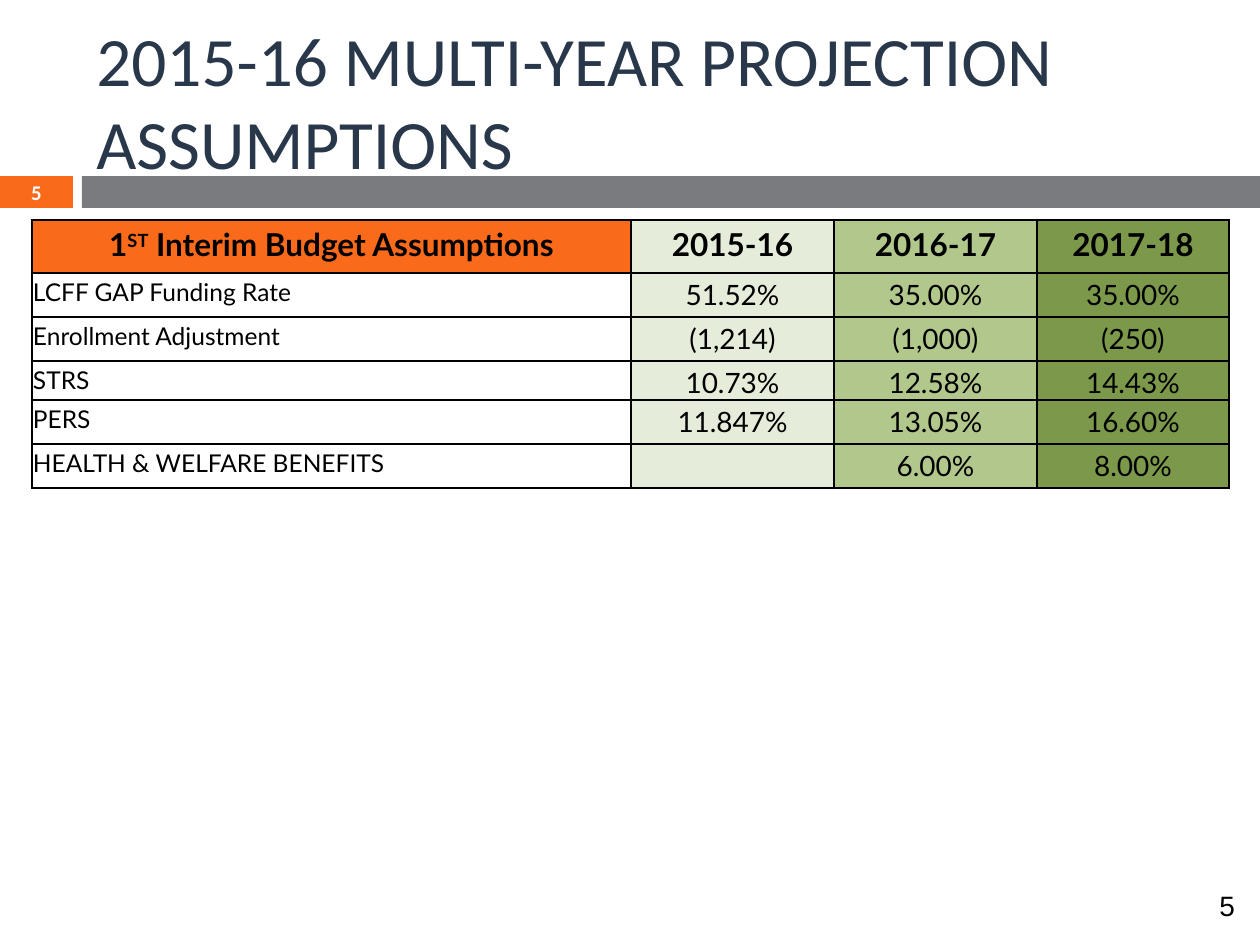
from dataclasses import dataclass

from lxml.etree import SubElement
from pptx import Presentation
from pptx.dml.color import RGBColor
from pptx.enum.shapes import MSO_SHAPE
from pptx.enum.text import MSO_ANCHOR, PP_ALIGN
from pptx.oxml.ns import qn
from pptx.util import Emu, Pt

PX = 914400 / 126
SLIDE_SIZE = (1260, 945)


@dataclass(frozen=True)
class Theme:
    title_font: str = "Calibri"
    table_font: str = "Lato"
    page_font: str = "Arial"
    navy: str = "28374A"
    orange: str = "F96A1B"
    gray: str = "797B7E"
    black: str = "000000"
    white: str = "FFFFFF"
    years: tuple = ("E5ECD9", "B2C78C", "7C984A")
    title_size: float = 39.6
    badge_size: float = 11.9
    header_size: int = 18
    label_size: int = 14
    value_size: int = 16
    page_size: int = 16
    border: int = 1
    line_spacing: float = 1.15


THEME = Theme()

COLUMN_WIDTHS = (599, 203, 203, 192)
ROW_HEIGHTS = (53, 44, 44, 39, 44, 44)
HEADER = ((("1", 0), ("ST", 30), (" Interim Budget Assumptions", 0)),
          "2015-16", "2016-17", "2017-18")
ASSUMPTIONS = (
    ("LCFF GAP Funding Rate", "51.52%", "35.00%", "35.00%"),
    ("Enrollment Adjustment", "(1,214)", "(1,000)", "(250)"),
    ("STRS", "10.73%", "12.58%", "14.43%"),
    ("PERS", "11.847%", "13.05%", "16.60%"),
    ("HEALTH & WELFARE BENEFITS", "", "6.00%", "8.00%"),
)


def px(length):
    return Emu(round(length * PX))


def set_fill(target, color):
    target.fill.solid()
    target.fill.fore_color.rgb = RGBColor.from_string(color)


def write(frame, text, *, font, size, color, bold=False,
          align=PP_ALIGN.LEFT, spacing=None):
    """Write a string, or (string, superscript percent) pairs, as one paragraph."""
    paragraph = frame.paragraphs[0]
    paragraph.alignment = align
    if spacing:
        paragraph.line_spacing = spacing
    parts = ((text, 0),) if isinstance(text, str) else text
    for words, raised in parts:
        run = paragraph.add_run()
        run.text = words
        run.font.name = font
        run.font.size = Pt(size)
        run.font.bold = bold
        run.font.color.rgb = RGBColor.from_string(color)
        if raised:
            run.font._element.set("baseline", str(raised * 1000))


def add_text(slide, box, text, anchor=MSO_ANCHOR.TOP, **text_format):
    text_box = slide.shapes.add_textbox(*map(px, box))
    frame = text_box.text_frame
    frame.word_wrap = True
    frame.vertical_anchor = anchor
    write(frame, text, **text_format)


def add_bar(slide, box, color):
    bar = slide.shapes.add_shape(MSO_SHAPE.RECTANGLE, *map(px, box))
    bar.shadow.inherit = False
    set_fill(bar, color)
    bar.line.fill.background()


def add_title(slide, box):
    add_text(slide, box, "2015-16 MULTI-YEAR PROJECTION ASSUMPTIONS",
             anchor=MSO_ANCHOR.MIDDLE, font=THEME.title_font,
             size=THEME.title_size, color=THEME.navy)


def add_number_band(slide, box, number):
    left, top, width, height = box
    badge_width, gap = 73, 9
    bar_left = badge_width + gap
    badge = (left, top, badge_width, height)
    add_bar(slide, badge, THEME.orange)
    add_bar(slide, (left + bar_left, top, width - bar_left, height), THEME.gray)
    add_text(slide, badge, number, anchor=MSO_ANCHOR.MIDDLE,
             font=THEME.title_font, size=THEME.badge_size, color=THEME.white,
             bold=True, align=PP_ALIGN.CENTER)


def set_borders(cell):
    properties = cell._tc.get_or_add_tcPr()
    for position, side in enumerate(("a:lnL", "a:lnR", "a:lnT", "a:lnB")):
        line = SubElement(properties, qn(side), w=str(Pt(THEME.border)))
        fill = SubElement(line, qn("a:solidFill"))
        SubElement(fill, qn("a:srgbClr"), val=THEME.black)
        properties.insert(position, line)


def format_cell(cell, text, is_header, is_label, color):
    cell.margin_left = cell.margin_right = px(1)
    cell.margin_top = cell.margin_bottom = 0
    if color:
        set_fill(cell, color)
    else:
        cell.fill.background()
    set_borders(cell)
    if text:
        body_size = THEME.label_size if is_label else THEME.value_size
        write(cell.text_frame, text, font=THEME.table_font,
              size=THEME.header_size if is_header else body_size,
              color=THEME.black, bold=is_header, spacing=THEME.line_spacing,
              align=PP_ALIGN.LEFT if is_label and not is_header
              else PP_ALIGN.CENTER)


def add_assumptions_table(slide, box):
    rows = (HEADER, *ASSUMPTIONS)
    table = slide.shapes.add_table(len(rows), len(HEADER), *map(px, box)).table
    table.first_row = table.horz_banding = False
    for column, width in zip(table.columns, COLUMN_WIDTHS):
        column.width = px(width)
    for row, height in zip(table.rows, ROW_HEIGHTS):
        row.height = px(height)
    for row_index, texts in enumerate(rows):
        is_header = row_index == 0
        colors = (THEME.orange if is_header else None, *THEME.years)
        for column_index, (text, color) in enumerate(zip(texts, colors)):
            format_cell(table.cell(row_index, column_index), text,
                        is_header, column_index == 0, color)


def add_page_number(slide, box, number):
    add_text(slide, box, number, font=THEME.page_font,
             size=THEME.page_size, color=THEME.black)


def main():
    presentation = Presentation()
    presentation.slide_width, presentation.slide_height = map(px, SLIDE_SIZE)
    slide = presentation.slides.add_slide(presentation.slide_layouts[6])
    add_number_band(slide, (0, 176, SLIDE_SIZE[0], 32), "5")
    add_title(slide, (84, 32, 1124, 136))
    add_assumptions_table(
        slide, (32, 220, sum(COLUMN_WIDTHS), sum(ROW_HEIGHTS)))
    add_page_number(slide, (1207, 882, 53, 47), "5")
    presentation.save("out.pptx")


if __name__ == "__main__":
    main()
